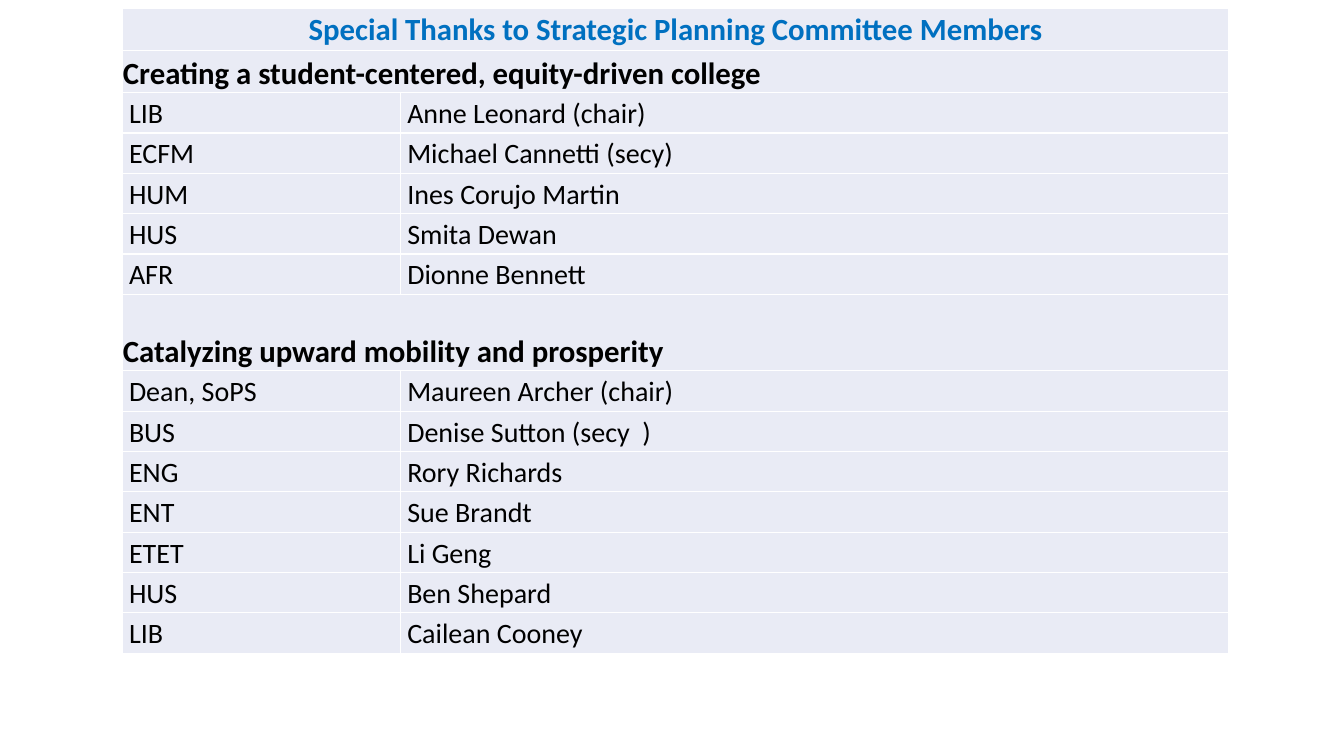
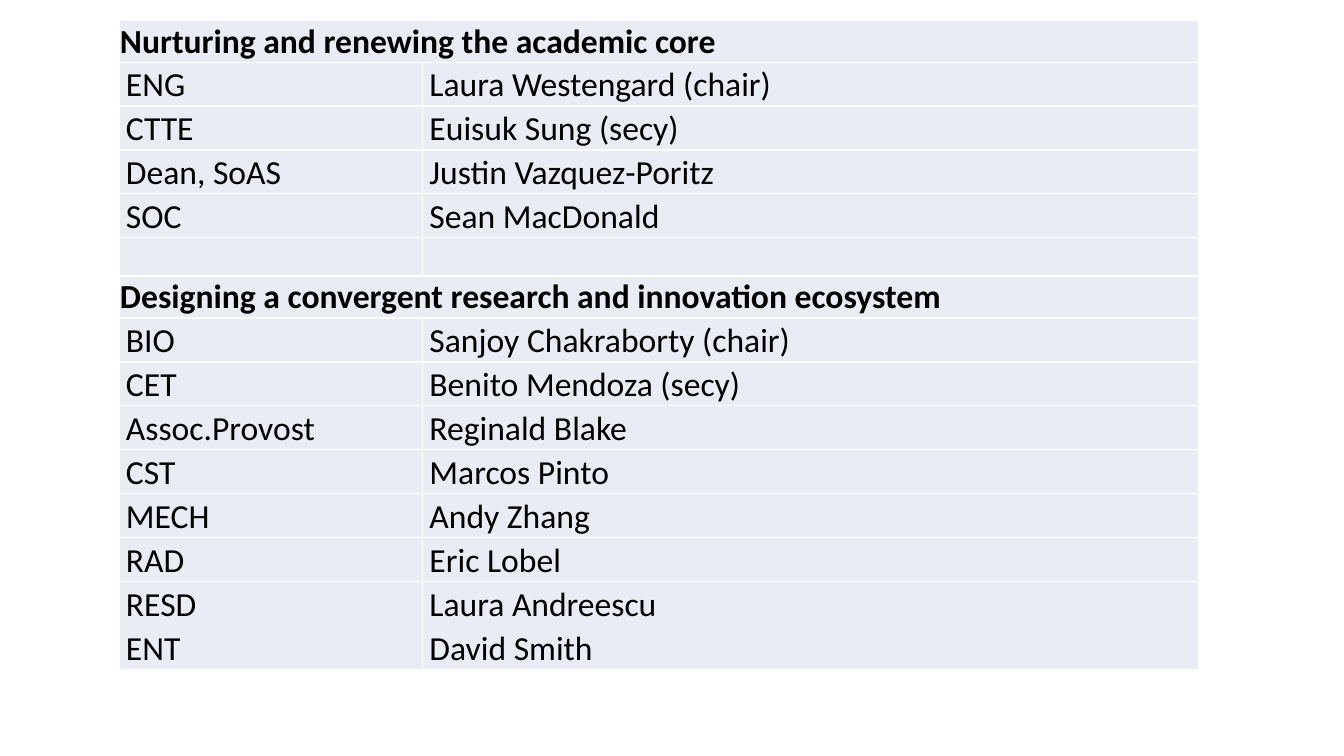
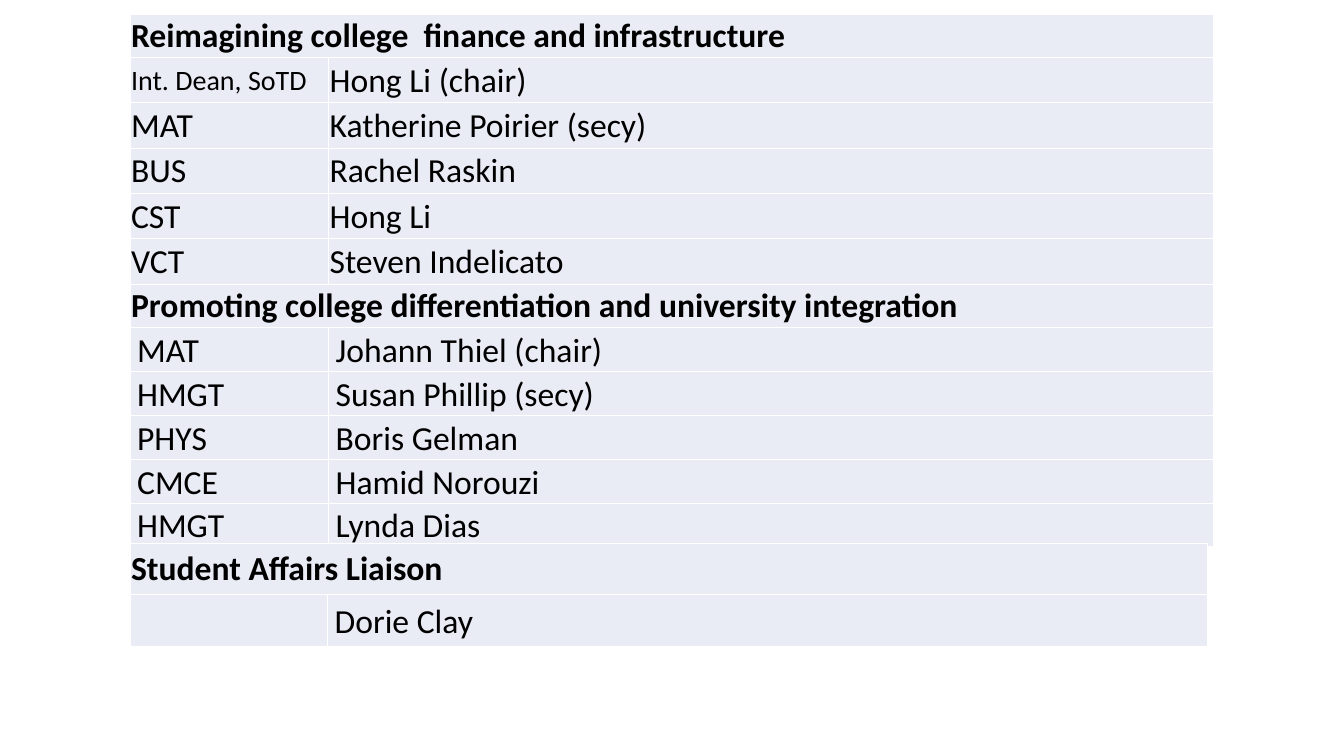
from lxml.etree import SubElement
from pptx import Presentation
from pptx.dml.color import RGBColor
from pptx.enum.text import MSO_ANCHOR as ANCHOR, PP_ALIGN as ALIGN
from pptx.oxml.ns import qn
from pptx.util import Inches, Pt

BLACK = RGBColor(0x00, 0x00, 0x00)
BLUE = RGBColor(0x00, 0x70, 0xC0)
PALE = RGBColor(0xE9, 0xEB, 0xF5)
WHITE = RGBColor(0xFF, 0xFF, 0xFF)
FONT = "Calibri"

# Row kinds: insets are left, top, right, bottom in inches
TIGHT, INDENTED = (0.01, 0.01, 0.01, 0), (0.07, 0, 0.07, 0)
HEADING = dict(insets=TIGHT, bold=True, color=BLACK, align=ALIGN.LEFT,
               anchor=ANCHOR.MIDDLE, spacing=None)
LOW_HEADING = HEADING | dict(anchor=ANCHOR.BOTTOM)
TITLE = HEADING | dict(color=BLUE, align=ALIGN.CENTER)
FLUSH = HEADING | dict(bold=False)
MEMBER = FLUSH | dict(insets=INDENTED, spacing=1.07)

# Content: each block is (row kind, row height, rows); one text spans both columns
SLIDES = [
    [dict(left=1.21, top=0.08, cols=(2.76, 8.22), head_size=22, size=20, blocks=[
        (TITLE, 0.42, [("Special Thanks to Strategic Planning Committee Members",)]),
        (LOW_HEADING, 0.42, [("Creating a student-centered, equity-driven college",)]),
        (MEMBER, 0.4, [
            ("LIB", "Anne Leonard (chair)"),
            ("ECFM", "Michael Cannetti (secy)"),
            ("HUM", "Ines Corujo Martin"),
            ("HUS", "Smita Dewan"),
            ("AFR", "Dionne Bennett")]),
        (LOW_HEADING, 0.76, [("Catalyzing upward mobility and prosperity",)]),
        (MEMBER, 0.4, [
            ("Dean, SoPS", "Maureen Archer (chair)"),
            ("BUS", "Denise Sutton (secy  )"),
            ("ENG", "Rory Richards"),
            ("ENT", "Sue Brandt"),
            ("ETET", "Li Geng"),
            ("HUS", "Ben Shepard"),
            ("LIB", "Cailean Cooney")]),
    ])],
    [dict(left=1.18, top=0.2, cols=(3.01, 7.7), head_size=24, size=24, blocks=[
        (HEADING, 0.41, [("Nurturing and renewing the academic core",)]),
        (MEMBER, 0.43, [
            ("ENG", "Laura Westengard (chair)"),
            ("CTTE", "Euisuk Sung (secy)"),
            ("Dean, SoAS", "Justin Vazquez-Poritz"),
            ("SOC", "Sean MacDonald")]),
        (MEMBER, 0.38, [("", "")]),
        (HEADING, 0.41, [("Designing a convergent research and innovation ecosystem",)]),
        (MEMBER, 0.43, [
            ("BIO", "Sanjoy Chakraborty (chair)"),
            ("CET", "Benito Mendoza (secy)"),
            ("Assoc.Provost", "Reginald Blake"),
            ("CST", "Marcos Pinto"),
            ("MECH", "Andy Zhang"),
            ("RAD", "Eric Lobel")]),
        (MEMBER, 0.86, [("RESD\nENT", "Laura Andreescu\nDavid Smith")]),
    ])],
    [dict(left=1.29, top=0.14, cols=(1.97, 8.78), head_size=24, size=24, blocks=[
        (HEADING, 0.43, [("Reimagining college  finance and infrastructure",)]),
        (FLUSH, 0.45, [
            ("Int. Dean, SoTD", "Hong Li (chair)"),
            ("MAT", "Katherine Poirier (secy)"),
            ("BUS", "Rachel Raskin"),
            ("CST", "Hong Li"),
            ("VCT", "Steven Indelicato")]),
        (HEADING, 0.43, [("Promoting college differentiation and university integration",)]),
        (MEMBER, 0.43, [
            ("MAT", "Johann Thiel (chair)"),
            ("HMGT", "Susan Phillip (secy)"),
            ("PHYS", "Boris Gelman"),
            ("CMCE", "Hamid Norouzi"),
            ("HMGT", "Lynda Dias")]),
    ]),
     dict(left=1.29, top=5.39, cols=(1.96, 8.73), head_size=24, size=24, blocks=[
         (HEADING, 0.51, [("Student Affairs Liaison",)]),
         (MEMBER, 0.51, [("", "Dorie Clay")]),
     ])],
]
SMALL_TEXT = {"Int. Dean, SoTD": 20}


def paint_cell(cell, kind):
    """Give a cell its white borders, fill, insets and anchor."""
    tc_pr = cell._tc.get_or_add_tcPr()
    for side in ("lnL", "lnR", "lnT", "lnB"):
        line = SubElement(tc_pr, qn(f"a:{side}"), w=str(Pt(1)))
        fill = SubElement(line, qn("a:solidFill"))
        SubElement(fill, qn("a:srgbClr"), val=str(WHITE))
    cell.fill.solid()
    cell.fill.fore_color.rgb = PALE
    for side, inset in zip(("left", "top", "right", "bottom"), kind["insets"]):
        setattr(cell, f"margin_{side}", Inches(inset))
    cell.vertical_anchor = kind["anchor"]


def write_cell(cell, text, kind, size):
    """Write one paragraph per line of text."""
    tf = cell.text_frame
    for i, line in enumerate(text.split("\n")):
        p = tf.add_paragraph() if i else tf.paragraphs[0]
        p.alignment = kind["align"]
        p.line_spacing = kind["spacing"]
        r = p.add_run()
        r.text = line
        font = dict(name=FONT, size=Pt(SMALL_TEXT.get(line, size)), bold=kind["bold"])
        for key, value in font.items():
            setattr(r.font, key, value)
        r.font.color.rgb = kind["color"]


def add_roster(s, roster):
    rows = [(kind, height, texts) for kind, height, group in roster["blocks"]
            for texts in group]
    cols = roster["cols"]
    box = (roster["left"], roster["top"], sum(cols), sum(row[1] for row in rows))
    table = s.shapes.add_table(len(rows), len(cols), *map(Inches, box)).table
    table.first_row = table.horz_banding = False
    for column, width in zip(table.columns, cols):
        column.width = Inches(width)
    for i, (kind, height, texts) in enumerate(rows):
        table.rows[i].height = Inches(height)
        for cell in table.rows[i].cells:
            paint_cell(cell, kind)
        spans = len(texts) == 1
        if spans:
            table.cell(i, 0).merge(table.cell(i, 1))
        size = roster["head_size" if spans else "size"]
        for j, text in enumerate(texts):
            if text:
                write_cell(table.cell(i, j), text, kind, size)


def main():
    prs = Presentation()
    prs.slide_width, prs.slide_height = Inches(13.33), Inches(7.5)
    for rosters in SLIDES:
        s = prs.slides.add_slide(prs.slide_layouts[6])
        for roster in rosters:
            add_roster(s, roster)
    prs.save("out.pptx")


if __name__ == "__main__":
    main()
